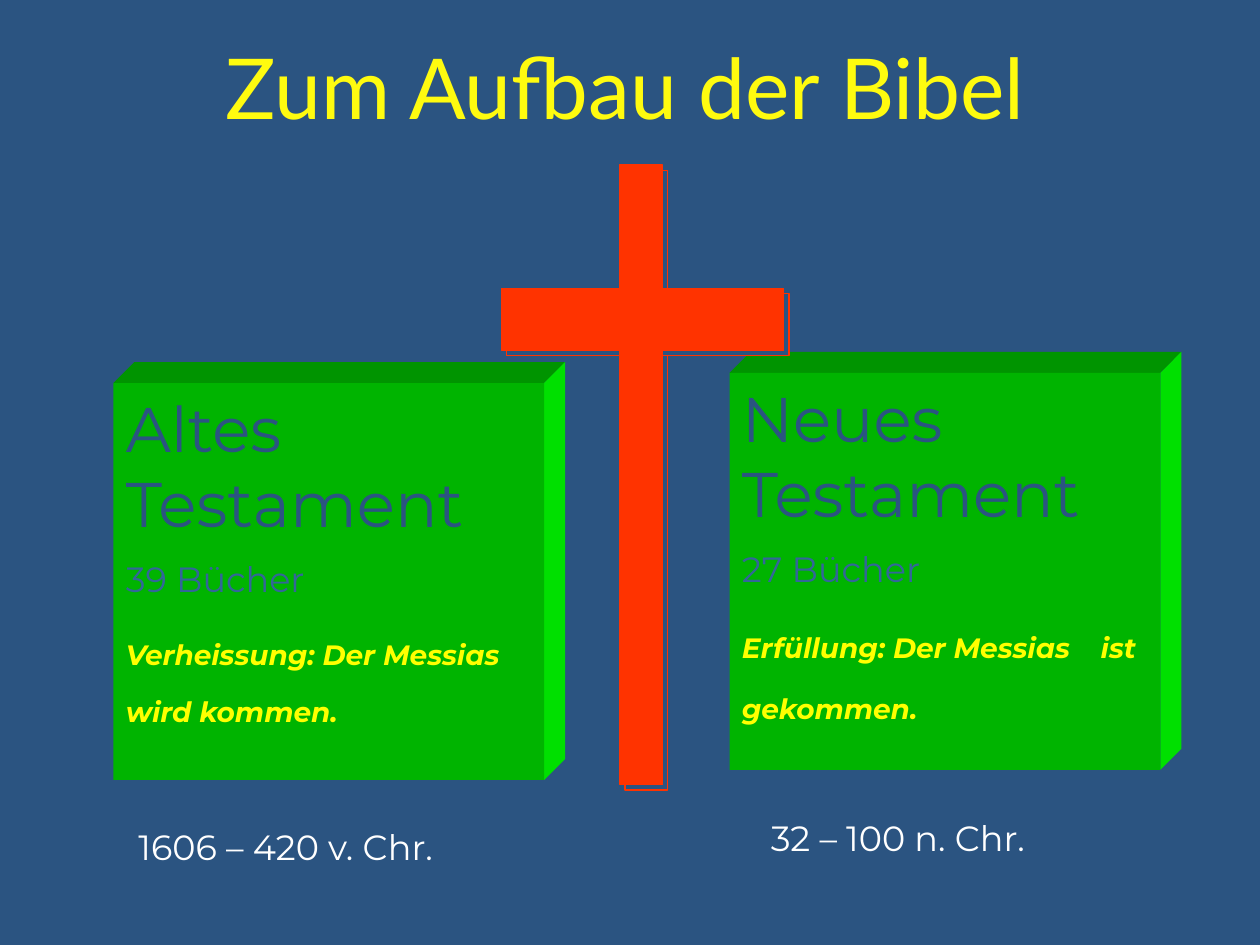
from pptx import Presentation
from pptx.dml.color import RGBColor
from pptx.enum.shapes import MSO_SHAPE
from pptx.enum.text import MSO_ANCHOR, PP_ALIGN
from pptx.oxml.ns import qn
from pptx.util import Pt
from lxml.etree import SubElement

THEME = dict(
    back="2B5481", title="FFFB0F", front="00B400", top="009400", side="00E000",
    books="336699", motto="FFFF00", date="FFFFFF", cross="FF3300",
    head="Lato", body="Montserrat", huge=48, big=36, mid=20, small=16)

TITLE = "Zum Aufbau der Bibel"
# Block corner, texts, line spacing of the motto, date and its corner
PARTS = [
    dict(at=(64.8, 218.9), name="Altes Testament", books="39 Bücher",
         motto="Verheissung: Der Messias wird kommen.", gap=1.7,
         date="1606 – 420 v. Chr.", spot=(72, 468)),
    dict(at=(416.9, 213.1), name="Neues Testament", books="27 Bücher",
         motto="Erfüllung: Der Messias\tist gekommen.", gap=1.8,
         date="32 – 100 n. Chr.", spot=(433.4, 463)),
]
WIDE, HIGH, DEEP = 246.2, 226.8, 12
BARS = [(354.2, 94.3, 24.5, 354.2), (286.6, 164.9, 161.3, 35.3)]
SHIFT = 3

deck = Presentation()
deck.slide_width, deck.slide_height = Pt(720), Pt(540)
slide = deck.slides.add_slide(deck.slide_layouts[5])
slide.background.fill.solid()
slide.background.fill.fore_color.rgb = RGBColor.from_string(THEME["back"])


def write(frame, text, size, color, font="body", bold=False, first=False,
          before=0, gap=None, align=PP_ALIGN.LEFT, tab=None):
    para = frame.paragraphs[0] if first else frame.add_paragraph()
    para.alignment = align
    para.space_before = Pt(before)
    if gap:
        para.line_spacing = gap
    if tab:
        stops = SubElement(para._p.get_or_add_pPr(), qn("a:tabLst"))
        SubElement(stops, qn("a:tab"), pos=str(Pt(tab)), algn="l")
    run = para.add_run()
    run.text = text
    run.font.name = THEME[font]
    run.font.size = Pt(THEME[size])
    run.font.color.rgb = RGBColor.from_string(THEME[color])
    run.font.bold = run.font.italic = bold


def paint(shape, fill, line=None):
    shape.shadow.inherit = False
    shape.fill.solid()
    shape.fill.fore_color.rgb = RGBColor.from_string(THEME[fill])
    if line:
        shape.line.color.rgb = RGBColor.from_string(THEME[line])
        shape.line.width = Pt(0.75)
    else:
        shape.line.fill.background()


def rect(x, y, w, h, fill, line=None):
    shape = slide.shapes.add_shape(
        MSO_SHAPE.RECTANGLE, Pt(x), Pt(y), Pt(w), Pt(h))
    paint(shape, fill, line)
    return shape


def face(points, fill):
    spots = [(Pt(x), Pt(y)) for x, y in points]
    path = slide.shapes.build_freeform(*spots[0], scale=1.0)
    path.add_line_segments(spots[1:], close=True)
    paint(path.convert_to_shape(), fill)


# Title
title = slide.shapes.title
title.left, title.top, title.width, title.height = (
    Pt(33.8), Pt(4.3), Pt(647.3), Pt(90))
title.text_frame.vertical_anchor = MSO_ANCHOR.MIDDLE
write(title.text_frame, TITLE, "huge", "title", font="head", first=True,
      align=PP_ALIGN.CENTER)

# Blocks with depth, and the dates below them
for part in PARTS:
    x, y = part["at"]
    right, low = x + WIDE, y + HIGH
    face([(x, y), (x + DEEP, y - DEEP), (right + DEEP, y - DEEP), (right, y)],
         "top")
    face([(right, y), (right + DEEP, y - DEEP), (right + DEEP, low - DEEP),
          (right, low)], "side")
    frame = rect(x, y, WIDE, HIGH, "front").text_frame
    frame.word_wrap = True
    frame.vertical_anchor = MSO_ANCHOR.TOP
    write(frame, part["name"], "big", "back", first=True)
    write(frame, part["books"], "mid", "books", before=10)
    write(frame, part["motto"], "small", "motto", bold=True, before=8,
          gap=part["gap"], tab=205 if "\t" in part["motto"] else None)

    left, top = part["spot"]
    box = slide.shapes.add_textbox(Pt(left), Pt(top), Pt(270), Pt(31.7))
    box.text_frame.word_wrap = True
    write(box.text_frame, part["date"], "mid", "date", first=True)

# Cross: outlined bars behind, solid bars in front
for move, fill in ((SHIFT, "back"), (0, "cross")):
    for x, y, w, h in BARS:
        rect(x + move, y + move, w, h, fill, line="cross")

deck.save("out.pptx")
